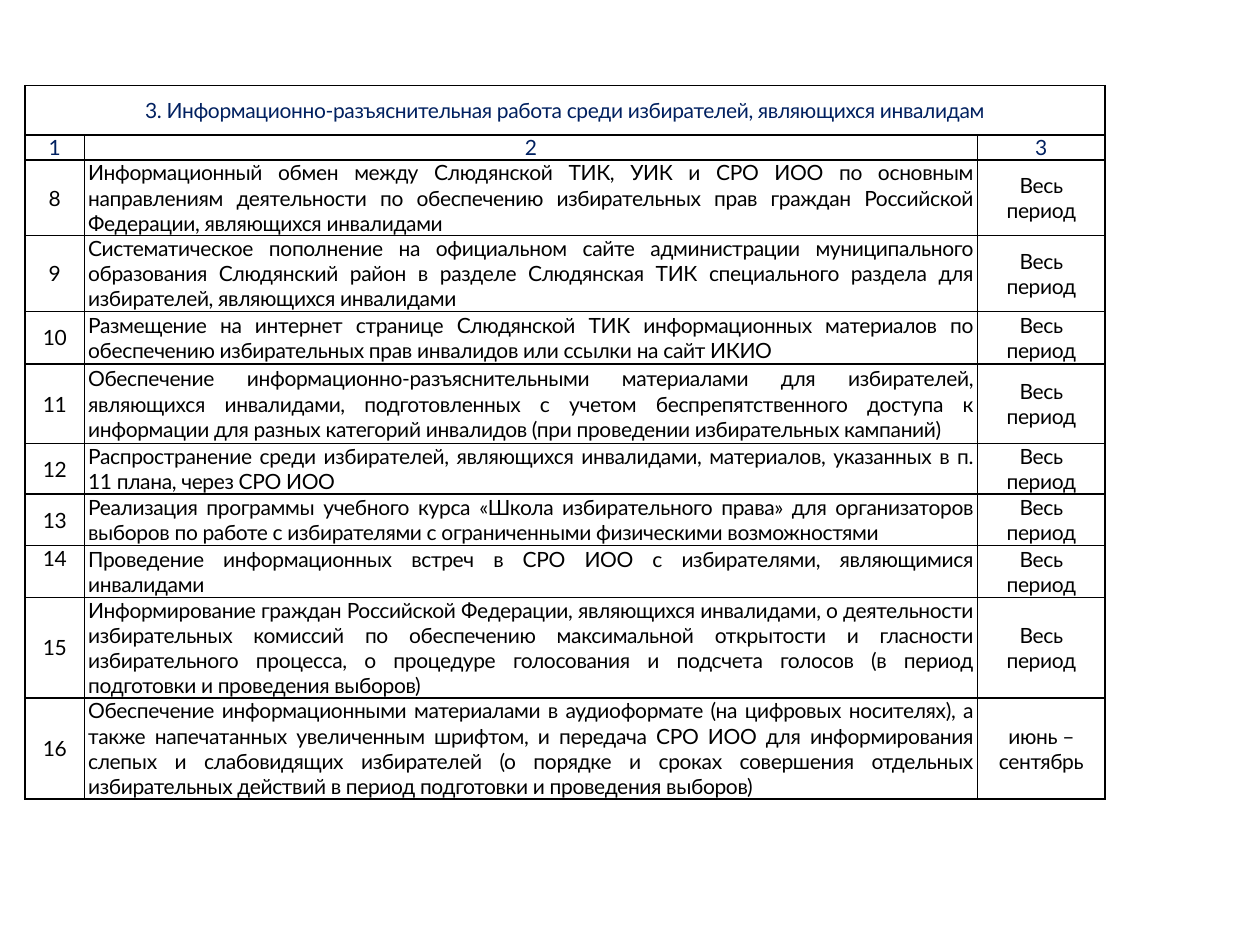
from lxml import etree
from pptx import Presentation
from pptx.dml.color import RGBColor
from pptx.enum.text import MSO_ANCHOR, PP_ALIGN
from pptx.oxml.ns import qn
from pptx.util import Inches, Pt

NAVY = RGBColor(0x00, 0x20, 0x60)
BLACK = RGBColor(0x00, 0x00, 0x00)
CENTER, JUSTIFY = PP_ALIGN.CENTER, PP_ALIGN.JUSTIFY
TOP, MIDDLE = MSO_ANCHOR.TOP, MSO_ANCHOR.MIDDLE
BORDER_WIDTH = Pt(1)
WHOLE_PERIOD = "Весь\nпериод"
TITLE = "3. Информационно-разъяснительная работа среди избирателей, являющихся инвалидам"

COLUMN_WIDTHS = [0.47, 7.09, 1.01]
ROW_HEIGHTS = [0.39, 0.2, 0.6, 0.6, 0.42, 0.63, 0.4, 0.41, 0.41, 0.8, 0.8]
CELL_FORMAT = {
    "margin_left": Inches(0.03),
    "margin_right": Inches(0.03),
    "margin_top": Inches(0),
    "margin_bottom": Inches(0),
    "vertical_anchor": MIDDLE,
}
FONT_FORMAT = {"name": "Lato", "size": Pt(12), "bold": False}

ACTIVITIES = [
    "Информационный обмен между Слюдянской ТИК, УИК и СРО ИОО по основным направлениям "
    "деятельности по обеспечению избирательных прав граждан Российской Федерации, "
    "являющихся инвалидами",
    "Систематическое пополнение на официальном сайте администрации муниципального "
    "образования Слюдянский район в разделе Слюдянская ТИК специального раздела для "
    "избирателей, являющихся инвалидами",
    "Размещение на интернет странице Слюдянской ТИК информационных материалов по "
    "обеспечению избирательных прав инвалидов или ссылки на сайт ИКИО",
    "Обеспечение информационно-разъяснительными материалами для избирателей, являющихся "
    "инвалидами, подготовленных с учетом беспрепятственного доступа к информации для "
    "разных категорий инвалидов (при проведении избирательных кампаний)",
    "Распространение среди избирателей, являющихся инвалидами, материалов, указанных в "
    "п. 11 плана, через СРО ИОО",
    "Реализация программы учебного курса «Школа избирательного права» для организаторов "
    "выборов по работе с избирателями с ограниченными физическими возможностями",
    "Проведение информационных встреч в СРО ИОО с избирателями, являющимися инвалидами",
    "Информирование граждан Российской Федерации, являющихся инвалидами, о деятельности "
    "избирательных комиссий по обеспечению максимальной открытости и гласности "
    "избирательного процесса, о процедуре голосования и подсчета голосов (в период "
    "подготовки и проведения выборов)",
    "Обеспечение информационными материалами в аудиоформате (на цифровых носителях), а "
    "также напечатанных увеличенным шрифтом, и передача СРО ИОО для информирования "
    "слепых и слабовидящих избирателей (о порядке и сроках совершения отдельных "
    "избирательных действий в период подготовки и проведения выборов)",
]
rows = [[TITLE, "", ""], ["1", "2", "3"]]
for number, activity in enumerate(ACTIVITIES, start=8):
    rows.append([str(number), activity, "июнь – сентябрь" if number == 16 else WHOLE_PERIOD])


def add_borders(cell):
    properties = cell._tc.get_or_add_tcPr()
    for position, side in enumerate(["lnL", "lnR", "lnT", "lnB"]):
        line = etree.Element(qn(f"a:{side}"), w=str(BORDER_WIDTH))
        fill = etree.SubElement(line, qn("a:solidFill"))
        etree.SubElement(fill, qn("a:srgbClr"), val=str(BLACK))
        properties.insert(position, line)


deck = Presentation()
deck.slide_width, deck.slide_height = Inches(10), Inches(7.5)
page = deck.slides.add_slide(deck.slide_layouts[6])
frame = page.shapes.add_table(
    len(rows), len(COLUMN_WIDTHS), Inches(0.2), Inches(0.68),
    Inches(sum(COLUMN_WIDTHS)), Inches(sum(ROW_HEIGHTS)))
plan = frame.table
plan.first_row = plan.horz_banding = False
for column, width in zip(plan.columns, COLUMN_WIDTHS):
    column.width = Inches(width)
for row, height in zip(plan.rows, ROW_HEIGHTS):
    row.height = Inches(height)
plan.cell(0, 0).merge(plan.cell(0, 2))

for row_index, texts in enumerate(rows):
    for column_index, text in enumerate(texts):
        cell = plan.cell(row_index, column_index)
        cell.fill.background()
        add_borders(cell)
        for name, value in CELL_FORMAT.items():
            setattr(cell, name, value)
        if text == "14":
            cell.vertical_anchor = TOP
        if not text:
            continue
        cell.text_frame.text = text
        for para in cell.text_frame.paragraphs:
            para.alignment = JUSTIFY if row_index > 1 and column_index == 1 else CENTER
            for span in para.runs:
                for name, value in FONT_FORMAT.items():
                    setattr(span.font, name, value)
                span.font.color.rgb = NAVY if row_index < 2 else BLACK
                span._r.get_or_add_rPr().set("spc", "-20")

deck.save("out.pptx")
